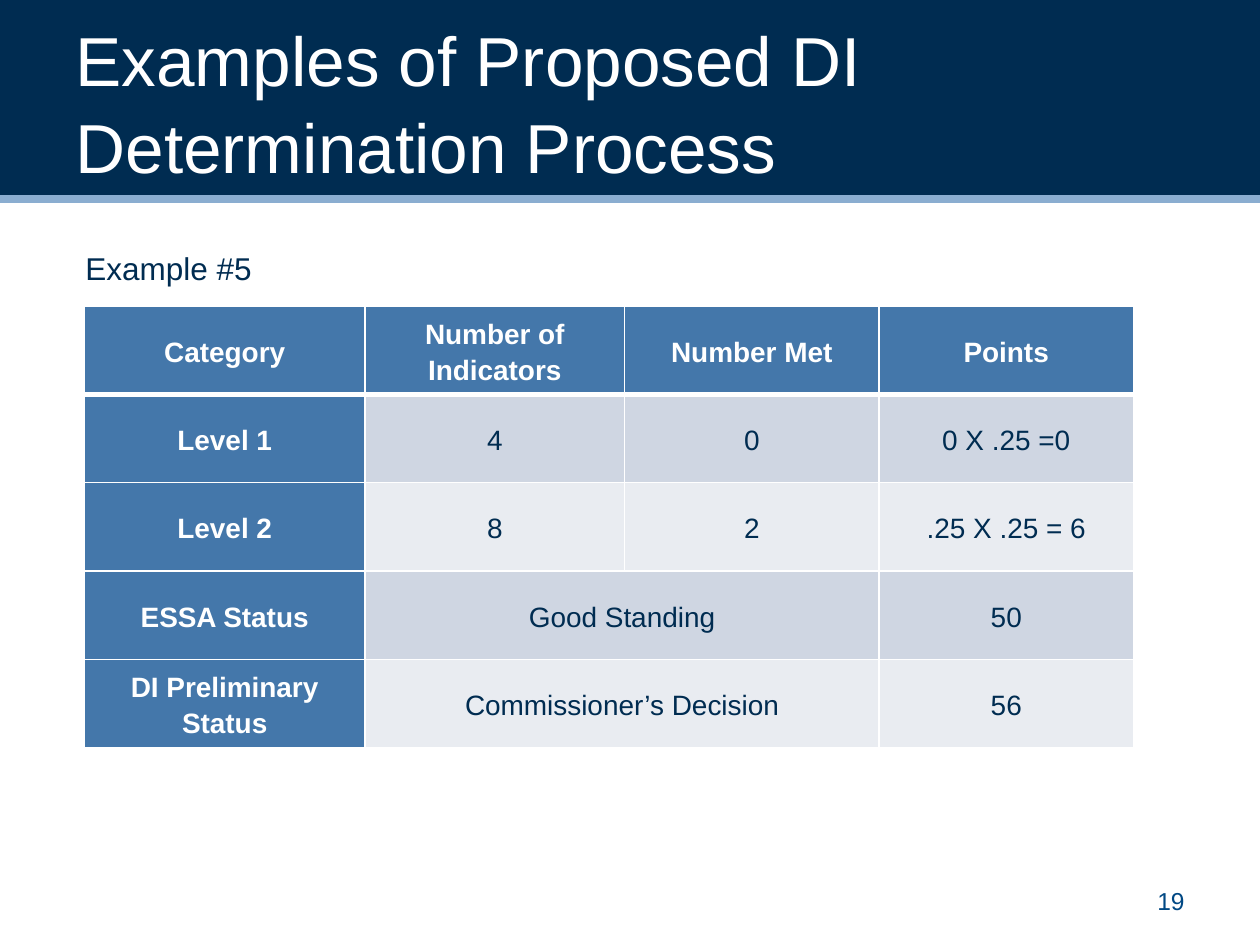
from lxml import etree
from pptx import Presentation
from pptx.dml.color import RGBColor
from pptx.enum.shapes import MSO_CONNECTOR as CONN, MSO_SHAPE as SHAPE
from pptx.enum.text import MSO_ANCHOR as ANCHOR, MSO_AUTO_SIZE as FIT, PP_ALIGN as ALIGN
from pptx.oxml.ns import qn
from pptx.util import Cm, Pt

NAVY = RGBColor(0x00, 0x2C, 0x51)
BLUE = RGBColor(0x44, 0x77, 0xAA)
SKY = RGBColor(0x8A, 0xAD, 0xD0)
PAGE_BLUE = RGBColor(0x00, 0x48, 0x84)
BAND_DARK = RGBColor(0xCF, 0xD6, 0xE2)
BAND_LIGHT = RGBColor(0xE9, 0xEC, 0xF1)
WHITE = RGBColor(0xFF, 0xFF, 0xFF)

ROWS = [
    ["Category", "Number of Indicators", "Number Met", "Points"],
    ["Level 1", "4", "0", "0 X .25 =0"],
    ["Level 2", "8", "2", ".25 X .25 = 6"],
    ["ESSA Status", "Good Standing", "", "50"],
    ["DI Preliminary Status", "Commissioner’s Decision", "", "56"],
]
COL_WIDTHS = [5.66, 5.23, 5.13, 5.13]
ROW_HEIGHT = 1.78


def style(p, size, color, align=ALIGN.LEFT, bold=False, spacing=None):
    p.alignment = align
    p.line_spacing = spacing
    p.font.name = "Arial"
    p.font.size = Pt(size)
    p.font.bold = bold
    p.font.color.rgb = color


def add_header(s, prs):
    band = s.shapes.add_shape(SHAPE.RECTANGLE, 0, 0, prs.slide_width, Cm(4.01))
    band.shadow.inherit = False
    band.fill.solid()
    band.fill.fore_color.rgb = NAVY
    band.line.fill.background()
    rule = s.shapes.add_connector(CONN.STRAIGHT, 0, Cm(4.01), prs.slide_width, Cm(4.01))
    rule.line.color.rgb = SKY
    rule.line.width = Pt(4.5)
    etree.SubElement(rule._element.spPr, qn("a:effectLst"))


def add_title(s, text):
    sp = s.shapes.title
    sp.left, sp.top, sp.width, sp.height = Cm(1.27), Cm(0.43), Cm(22.86), Cm(3.18)
    tf = sp.text_frame
    tf.text = text
    tf.auto_size = FIT.NONE
    tf.vertical_anchor = ANCHOR.MIDDLE
    style(tf.paragraphs[0], 39.6, WHITE, spacing=1.05)
    tree = s.shapes._spTree
    tree.remove(sp._element)
    tree.append(sp._element)


def add_label(s, text, box, size, color, align=ALIGN.LEFT, anchor=ANCHOR.TOP):
    tf = s.shapes.add_textbox(*[Cm(v) for v in box]).text_frame
    tf.word_wrap = True
    tf.vertical_anchor = anchor
    tf.text = text
    style(tf.paragraphs[0], size, color, align)


def set_borders(cell, top, bottom):
    tcPr = cell._tc.get_or_add_tcPr()
    for i, (side, width) in enumerate([("L", 1), ("R", 1), ("T", top), ("B", bottom)]):
        ln = etree.Element(qn("a:ln" + side), w=str(Pt(width)))
        fill = etree.SubElement(ln, qn("a:solidFill"))
        etree.SubElement(fill, qn("a:srgbClr"), val=str(WHITE))
        tcPr.insert(i, ln)


def format_cell(cell, text, row, col):
    heading = row == 0 or col == 0
    cell.text = text
    cell.vertical_anchor = ANCHOR.MIDDLE
    cell.margin_left = cell.margin_right = Cm(0.18)
    cell.margin_top = cell.margin_bottom = 0
    cell.fill.solid()
    band = BAND_DARK if row % 2 else BAND_LIGHT
    cell.fill.fore_color.rgb = BLUE if heading else band
    style(cell.text_frame.paragraphs[0], 16, WHITE if heading else NAVY,
          ALIGN.CENTER, heading, 1.15)
    set_borders(cell, 3 if row == 1 else 1, 3 if row == 0 else 1)


def add_points_table(s):
    table = s.shapes.add_table(
        len(ROWS), len(COL_WIDTHS), Cm(1.7), Cm(6.17),
        Cm(sum(COL_WIDTHS)), Cm(ROW_HEIGHT * len(ROWS))).table
    for column, width in zip(table.columns, COL_WIDTHS):
        column.width = Cm(width)
    for r, texts in enumerate(ROWS):
        table.rows[r].height = Cm(ROW_HEIGHT)
        for c, text in enumerate(texts):
            format_cell(table.cell(r, c), text, r, c)
        if not texts[2]:
            table.cell(r, 1).merge(table.cell(r, 2))


def main():
    prs = Presentation()
    prs.slide_width, prs.slide_height = Cm(25.4), Cm(19.05)
    s = prs.slides.add_slide(prs.slide_layouts[5])
    add_header(s, prs)
    add_title(s, "Examples of Proposed DI Determination Process")
    add_label(s, "19", (18.21, 17.65, 5.92, 1.02), 14, PAGE_BLUE, ALIGN.RIGHT, ANCHOR.MIDDLE)
    add_label(s, "Example #5", (1.47, 4.9, 4.57, 1.02), 18, NAVY)
    add_points_table(s)
    prs.save("out.pptx")


if __name__ == "__main__":
    main()
